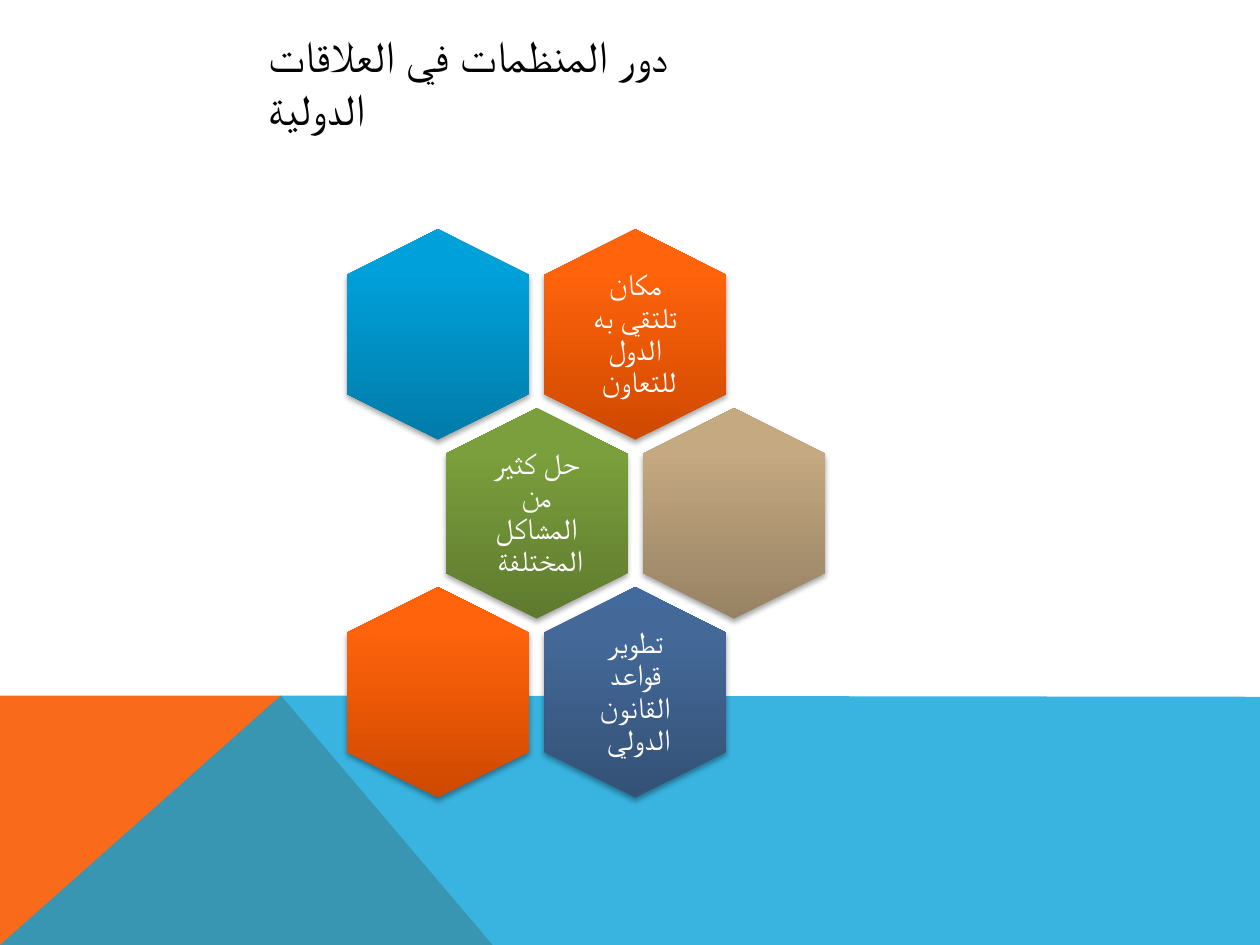
from lxml.etree import SubElement
from pptx import Presentation
from pptx.dml.color import RGBColor
from pptx.enum.shapes import MSO_SHAPE
from pptx.enum.text import MSO_ANCHOR, PP_ALIGN
from pptx.oxml import parse_xml
from pptx.oxml.ns import nsdecls, qn
from pptx.util import Inches, Pt

ORANGE = ("CE4900", "FF630C", "FF640E")
BLUE = ("007BA8", "00A0DA", "00A0DB")
GREEN = ("5F7A2E", "7B9F3C", "7CA13B")
TAN = ("978263", "C4A981", "C6AA80")
NAVY = ("345176", "446999", "426A9C")

HEXAGONS = [
    (0, 1, ORANGE, "مكان تلتقي به الدول للتعاون "),
    (0, 0, BLUE, ""),
    (1, 0, GREEN, "حل كثير من المشاكل المختلفة "),
    (1, 1, TAN, ""),
    (2, 1, NAVY, "تطوير قواعد القانون الدولي "),
    (2, 0, ORANGE, ""),
]


def rgb(color):
    return RGBColor.from_string(color)


def add_text(s, box, text, font, size, color, inset=None):
    tf = s.shapes.add_textbox(*map(Inches, box)).text_frame
    tf.word_wrap = True
    tf.vertical_anchor = MSO_ANCHOR.MIDDLE
    if inset is not None:
        tf.margin_left = tf.margin_right = Inches(inset)
        tf.margin_top = tf.margin_bottom = Inches(inset)
    p = tf.paragraphs[0]
    p.text = text
    f = p.runs[0].font
    f.name, f.size, f.color.rgb = font, Pt(size), rgb(color)
    return p


def add_polygon(s, points, color, alpha=None):
    start, *rest = [(Inches(x), Inches(y)) for x, y in points]
    builder = s.shapes.build_freeform(*start)
    builder.add_line_segments(rest, close=True)
    sp = builder.convert_to_shape()
    sp.shadow.inherit = False
    sp.fill.solid()
    sp.fill.fore_color.rgb = rgb(color)
    sp.line.fill.background()
    if alpha is not None:
        clr = sp._element.spPr.find(qn("a:solidFill"))[0]
        SubElement(clr, qn("a:alpha")).set("val", str(alpha * 1000))


def add_footer(s, left, top, width, height):
    right, bottom = left + width, top + height
    peak = (left + 2.23, top)
    add_polygon(s, [(left, bottom), (left, top), peak, (left + 3.91, bottom)], "F96A1B")
    add_polygon(s, [(left, bottom), peak, (right, top + 0.01), (right, bottom)], "08A1D9", 80)


def set_gradient_and_shadow(sp, colors):
    stops = "".join(
        f'<a:gs pos="{pos * 1000}"><a:srgbClr val="{color}"/></a:gs>'
        for pos, color in zip((0, 80, 100), colors)
    )
    sp.line.fill.background()
    spPr = sp._element.spPr
    spPr.find(qn("a:ln")).addprevious(parse_xml(
        f'<a:gradFill {nsdecls("a")} rotWithShape="0"><a:gsLst>{stops}</a:gsLst>'
        '<a:lin ang="16200000" scaled="0"/></a:gradFill>'
    ))
    spPr.append(parse_xml(
        f'<a:effectLst {nsdecls("a")}><a:outerShdw blurRad="{Pt(3.1)}" dist="{Pt(1.8)}" '
        'dir="5400000" rotWithShape="0"><a:srgbClr val="000000"><a:alpha val="35000"/>'
        '</a:srgbClr></a:outerShdw></a:effectLst>'
    ))


def add_hexagon(s, left, top, width, height, colors, text):
    sp = s.shapes.add_shape(MSO_SHAPE.HEXAGON, *map(Inches, (left, top, width, height)))
    sp.rotation = 90
    sp.adjustments[0] = 0.25
    sp.adjustments[1] = 1.15
    set_gradient_and_shadow(sp, colors)
    if text:
        w, h = 1, 1.15
        box = (left + (width - w) / 2, top + (height - h) / 2, w, h)
        p = add_text(s, box, text, "Cabin", 17, "FFFFFF", 0.07)
        p.alignment = PP_ALIGN.CENTER
        p.line_spacing = 0.9
        p._p.get_or_add_pPr().set("rtl", "1")


def add_honeycomb(s, left, top, width, height):
    hex_w, hex_h = 1.67, 1.45
    col_step = (width - hex_w) / 1.5
    row_step = (height - hex_h) / 2
    for row, col, colors, text in HEXAGONS:
        x = left + (col + row % 2 / 2) * col_step
        add_hexagon(s, x, top + row * row_step, hex_w, hex_h, colors, text)


def main():
    prs = Presentation()
    prs.slide_width, prs.slide_height = Inches(10), Inches(7.5)
    s = prs.slides.add_slide(prs.slide_layouts[6])
    add_footer(s, 0, 5.52, 10, 1.98)
    add_text(s, (2.03, 0.2, 4.21, 0.89), "دور المنظمات في العلاقات الدولية",
             "Calibri", 25.2, "000000")
    add_honeycomb(s, 2.64, 1.93, 4.02, 4.29)
    prs.save("out.pptx")


if __name__ == "__main__":
    main()
